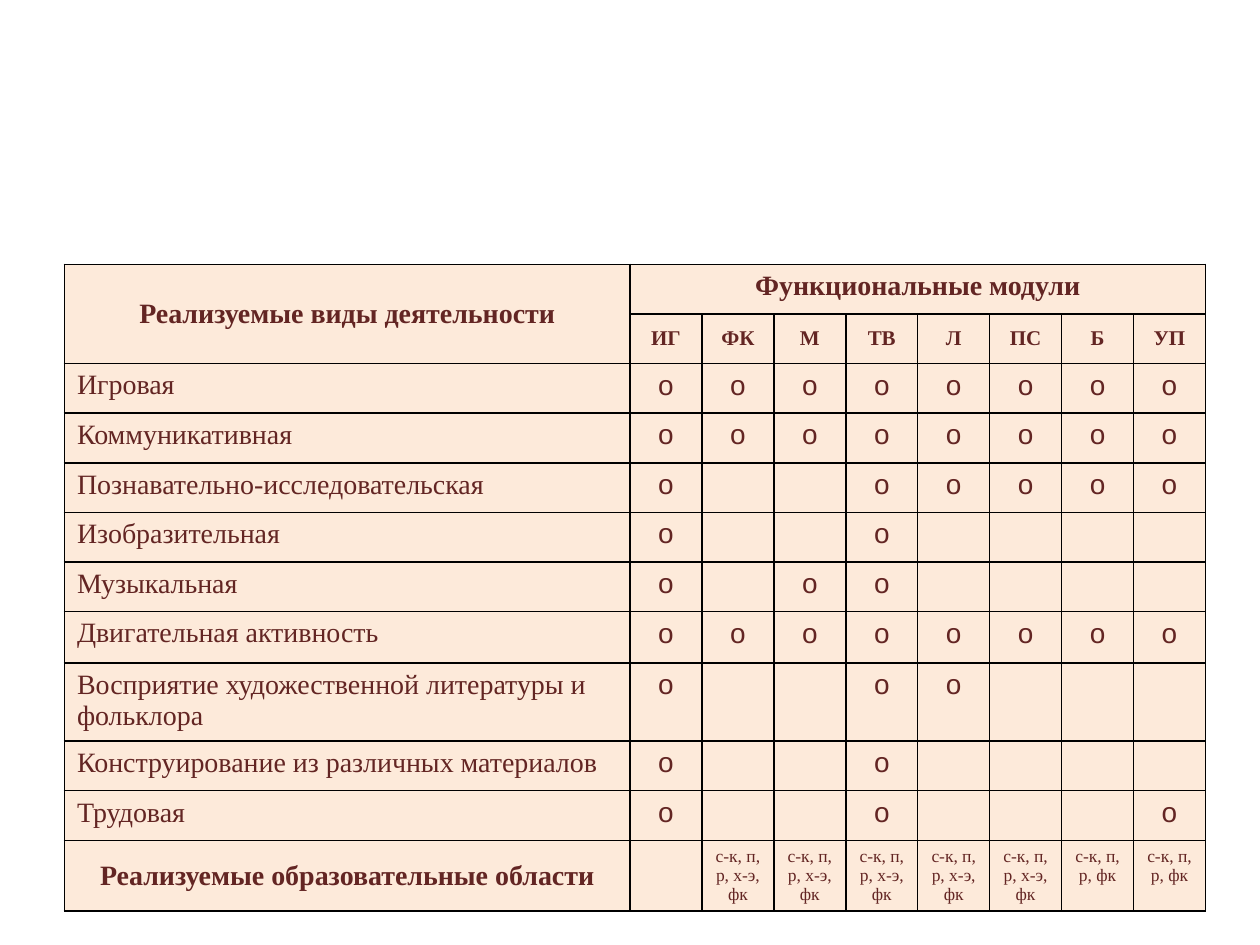
"""Build a slide with a table of activities against functional modules."""
import pptx
import pptx.dml.color
import pptx.enum.text
import pptx.oxml.ns
import pptx.util
from lxml import etree

Cm = pptx.util.Cm
Pt = pptx.util.Pt
ALIGN = pptx.enum.text.PP_ALIGN
ANCHOR = pptx.enum.text.MSO_ANCHOR
COLORS = {"text": "632523", "fill": "FDEADA", "border": "000000"}
FORMATS = {
    "heading": {"name": "Times New Roman", "size": Pt(16), "bold": True},
    "module": {"name": "Times New Roman", "size": Pt(12), "bold": True},
    "activity": {"name": "Times New Roman", "size": Pt(16), "bold": False},
    "mark": {"name": "Arial", "size": Pt(16), "bold": False},
    "area": {"name": "Times New Roman", "size": Pt(10), "bold": False},
}
MODULES = ["ИГ", "ФК", "М", "ТВ", "Л", "ПС", "Б", "УП"]
ACTIVITIES = {
    "Игровая": MODULES,
    "Коммуникативная": MODULES,
    "Познавательно-исследовательская": ["ИГ", "ТВ", "Л", "ПС", "Б", "УП"],
    "Изобразительная": ["ИГ", "ТВ"],
    "Музыкальная": ["ИГ", "М", "ТВ"],
    "Двигательная активность": MODULES,
    "Восприятие художественной литературы и фольклора": ["ИГ", "ТВ", "Л"],
    "Конструирование из различных материалов": ["ИГ", "ТВ"],
    "Трудовая": ["ИГ", "ТВ", "УП"],
}
AREAS = [""] + ["с-к, п, р, х-э, фк"] * 5 + ["с-к, п, р, фк"] * 2
HEIGHTS = [1] * 7 + [1.04, 1.57, 1, 1, 1.42]

rows = [
    ["Реализуемые виды деятельности", "Функциональные модули"] + [""] * 7,
    [""] + MODULES,
]
for activity, used in ACTIVITIES.items():
    rows.append([activity] + ["о" if module in used else "" for module in MODULES])
rows.append(["Реализуемые образовательные области"] + AREAS)
last = len(rows) - 1


def style_cell(cell):
    """Give a cell its borders and fill."""
    properties = cell._tc.get_or_add_tcPr()
    for side in ("a:lnL", "a:lnR", "a:lnT", "a:lnB"):
        line = etree.SubElement(properties, pptx.oxml.ns.qn(side), w=str(Pt(1)))
        solid = etree.SubElement(line, pptx.oxml.ns.qn("a:solidFill"))
        etree.SubElement(solid, pptx.oxml.ns.qn("a:srgbClr"), val=COLORS["border"])
    cell.fill.solid()
    cell.fill.fore_color.rgb = pptx.dml.color.RGBColor.from_string(COLORS["fill"])


def write_cell(cell, text, kind, align):
    """Write formatted text into a cell."""
    para = cell.text_frame.paragraphs[0]
    para.alignment = align
    span = para.add_run()
    span.text = text
    for key, value in FORMATS[kind].items():
        setattr(span.font, key, value)
    span.font.color.rgb = pptx.dml.color.RGBColor.from_string(COLORS["text"])


deck = pptx.Presentation()
deck.slide_width = Cm(25.4)
deck.slide_height = Cm(19.05)
page = deck.slides.add_slide(deck.slide_layouts[6])

frame = page.shapes.add_table(
    len(rows), 9, Cm(1.3), Cm(5.33), Cm(23), Cm(sum(HEIGHTS))
)
table = frame.table
for index, column in enumerate(table.columns):
    column.width = Cm(1.45 if index else 11.4)
for row, height in zip(table.rows, HEIGHTS):
    row.height = Cm(height)
table.cell(0, 0).merge(table.cell(1, 0))
table.cell(0, 1).merge(table.cell(0, 8))

for r, texts in enumerate(rows):
    for c, text in enumerate(texts):
        cell = table.cell(r, c)
        style_cell(cell)
        if not text:
            cell.margin_top = cell.margin_bottom = 0
            continue
        if r == 0 or (r == last and c == 0):
            kind = "heading"
        elif r == 1:
            kind = "module"
        elif r == last:
            kind = "area"
        else:
            kind = "mark" if c else "activity"
        write_cell(cell, text, kind, ALIGN.LEFT if kind == "activity" else ALIGN.CENTER)
        if kind == "module" or (kind == "heading" and c == 0):
            cell.vertical_anchor = ANCHOR.MIDDLE

deck.save("out.pptx")
